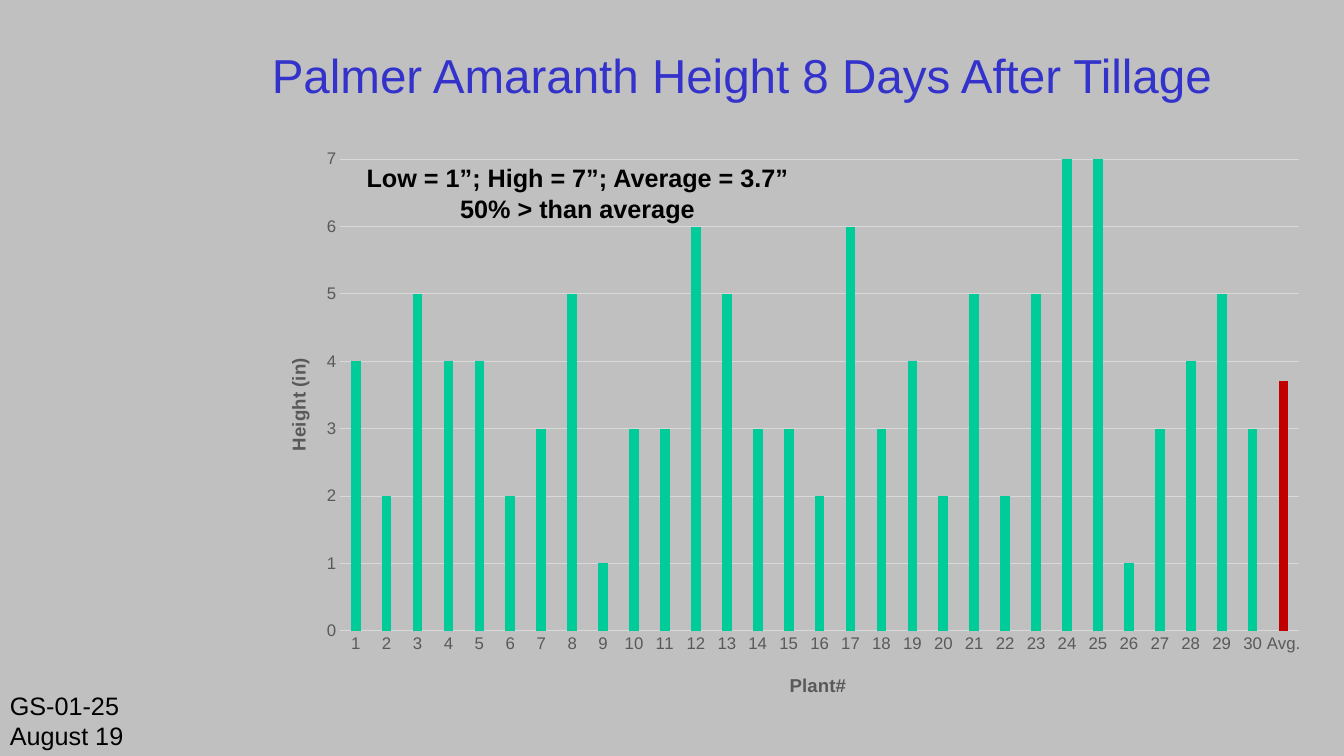
from dataclasses import dataclass

from pptx import Presentation
from pptx.chart.data import CategoryChartData
from pptx.dml.color import RGBColor
from pptx.enum.chart import XL_CHART_TYPE, XL_TICK_MARK
from pptx.enum.text import MSO_ANCHOR, PP_ALIGN
from pptx.oxml import parse_xml
from pptx.oxml.ns import nsdecls, qn
from pptx.util import Cm, Pt


@dataclass(frozen=True)
class Theme:
    font: str = "Arial"
    background: RGBColor = RGBColor(0xC0, 0xC0, 0xC0)
    heading: RGBColor = RGBColor(0x33, 0x33, 0xCC)
    body: RGBColor = RGBColor(0, 0, 0)
    axis: RGBColor = RGBColor(0x59, 0x59, 0x59)
    grid: RGBColor = RGBColor(0xD9, 0xD9, 0xD9)
    plant: RGBColor = RGBColor(0x00, 0xCC, 0x99)
    average: RGBColor = RGBColor(0xC0, 0x00, 0x00)
    heading_size: Pt = Pt(34)
    body_size: Pt = Pt(18)
    axis_title_size: Pt = Pt(13.3)
    tick_size: Pt = Pt(12)
    line_width: Pt = Pt(0.75)


theme = Theme()


def add_text(box, lines, size, color, bold=False, align=PP_ALIGN.LEFT, wrap=False):
    frame = slide.shapes.add_textbox(*map(Cm, box)).text_frame
    frame.word_wrap = wrap
    frame.vertical_anchor = MSO_ANCHOR.MIDDLE
    for number, line in enumerate(lines):
        paragraph = frame.add_paragraph() if number else frame.paragraphs[0]
        paragraph.alignment = align
        run = paragraph.add_run()
        run.text = line
        run.font.name, run.font.size, run.font.bold = theme.font, size, bold
        run.font.color.rgb = color


def set_layout(element, index, **settings):
    for old in element.findall(qn("c:layout")):
        element.remove(old)
    items = "".join(f'<c:{key} val="{value}"/>' for key, value in settings.items())
    element.insert(index, parse_xml(
        f'<c:layout {nsdecls("c")}><c:manualLayout>{items}</c:manualLayout></c:layout>'))


# Slide
presentation = Presentation()
presentation.slide_width, presentation.slide_height = Cm(33.87), Cm(19.05)
slide = presentation.slides.add_slide(presentation.slide_layouts[6])
slide.background.fill.solid()
slide.background.fill.fore_color.rgb = theme.background

# Heading
add_text((6.6, 0.28, 27, 3.18), ["Palmer Amaranth Height 8 Days After Tillage"],
         theme.heading_size, theme.heading, wrap=True)

# Plant heights, with the average last
heights = [4, 2, 5, 4, 4, 2, 3, 5, 1, 3, 3, 6, 5, 3, 3,
           2, 6, 3, 4, 2, 5, 2, 5, 7, 7, 1, 3, 4, 5, 3]
height_data = CategoryChartData()
height_data.categories = [str(n) for n in range(1, len(heights) + 1)] + ["Avg."]
height_data.add_series("Height (in)", heights + [3.7])
chart = slide.shapes.add_chart(
    XL_CHART_TYPE.COLUMN_CLUSTERED, Cm(6.6), Cm(3.63), Cm(26.7), Cm(14.15), height_data).chart
chart.has_title = chart.has_legend = False
chart.font.name, chart.font.size = theme.font, theme.tick_size
chart.font.color.rgb = theme.axis
set_layout(chart.plots[0]._element.getparent(), 0, layoutTarget="inner",
           xMode="edge", yMode="edge", x=0.074, y=0.027, w=0.905, h=0.84)

# Columns
columns = chart.plots[0]
columns.gap_width, columns.overlap, columns.vary_by_categories = 219, -27, False
height_series = columns.series[0]
height_series.invert_if_negative = False
average_column = height_series.points[len(heights)]
for column, color in ((height_series, theme.plant), (average_column, theme.average)):
    column.format.fill.solid()
    column.format.fill.fore_color.rgb = color

# Axes
plant_axis, height_axis = chart.category_axis, chart.value_axis
for axis, label, x, y, rotation in (
    (plant_axis, "Plant#", 0.495, 0.937, 0),
    (height_axis, "Height (in)", 0.02, 0.375, -5400000),
):
    axis.major_tick_mark = axis.minor_tick_mark = XL_TICK_MARK.NONE
    axis.tick_labels.font.name, axis.tick_labels.font.size = theme.font, theme.tick_size
    axis.tick_labels.font.color.rgb = theme.axis
    frame = axis.axis_title.text_frame
    frame._txBody.find(qn("a:bodyPr")).set("rot", str(rotation))
    run = frame.paragraphs[0].add_run()
    run.text = label
    run.font.name, run.font.size, run.font.bold = theme.font, theme.axis_title_size, True
    run.font.color.rgb = theme.axis
    set_layout(axis.axis_title._element, 1, xMode="edge", yMode="edge", x=x, y=y)

height_axis.minimum_scale, height_axis.maximum_scale, height_axis.major_unit = 0, 7, 1
height_axis.has_major_gridlines = True
height_axis.format.line.fill.background()
for line in (plant_axis.format.line, height_axis.major_gridlines.format.line):
    line.color.rgb, line.width = theme.grid, theme.line_width

# Trial and date
add_text((0, 17.25, 3.4, 1.8), ["GS-01-25", "August 19"], theme.body_size, theme.body)

# Summary over the chart
add_text((8.74, 3.96, 11.63, 1.8),
         ["Low = 1”; High = 7”; Average = 3.7”", "50% > than average"],
         theme.body_size, theme.body, bold=True, align=PP_ALIGN.CENTER)

presentation.save("out.pptx")
